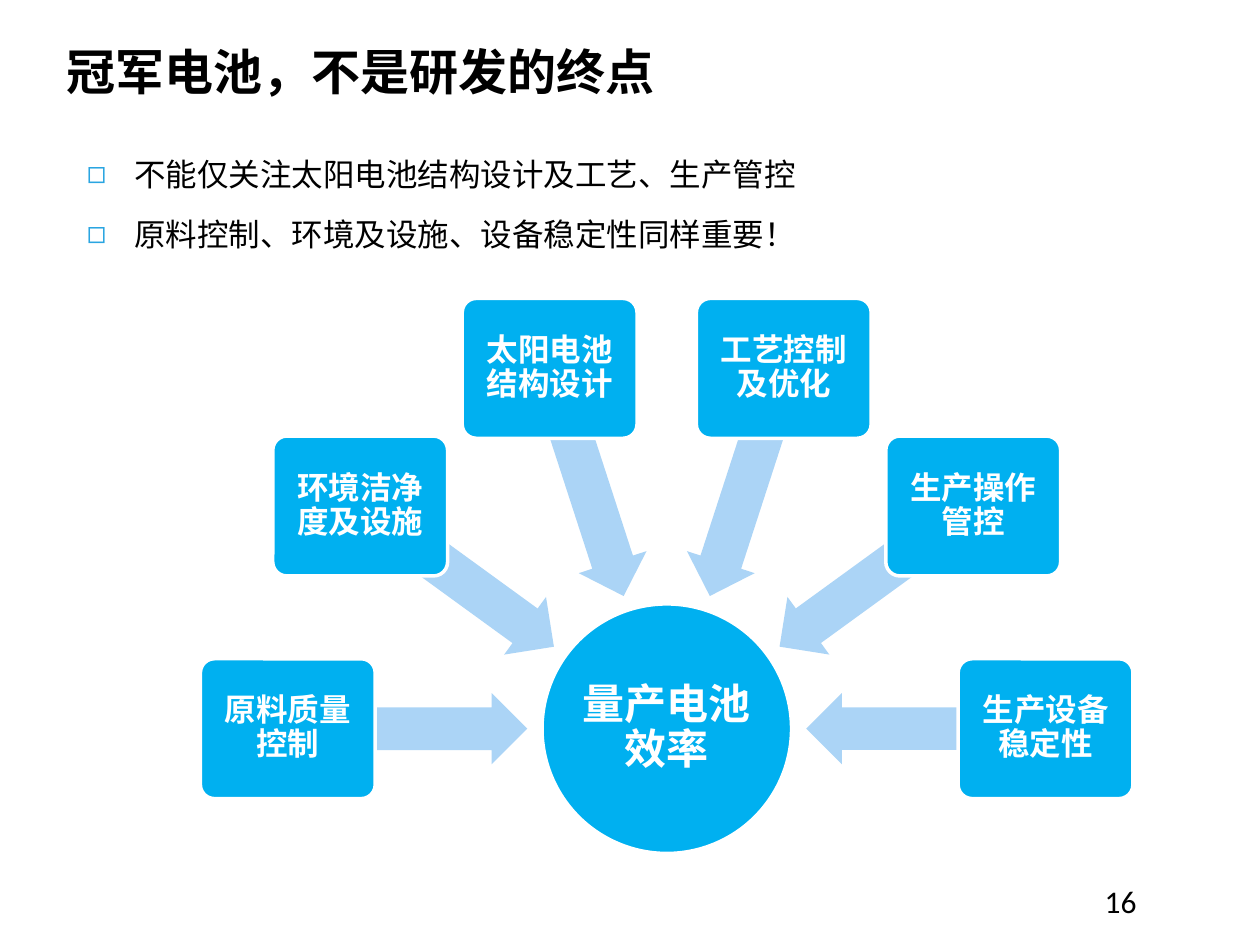
"""Build the slide on the factors that converge on mass-production cell efficiency."""
import math

import pptx
import pptx.dml.color
import pptx.enum.shapes
import pptx.enum.text
import pptx.oxml
import pptx.oxml.ns
import pptx.util
from dataclasses import dataclass

Pt = pptx.util.Pt
SHAPE = pptx.enum.shapes.MSO_SHAPE
ALIGN = pptx.enum.text.PP_ALIGN
ANCHOR = pptx.enum.text.MSO_ANCHOR


@dataclass(frozen=True)
class Theme:
    font: str = "Noto Sans CJK SC"
    number_font: str = "Calibri"
    black: str = "000000"
    white: str = "FFFFFF"
    blue: str = "00B0F0"
    pale_blue: str = "ABD4F6"
    bullet: str = "2AA5E1"
    title_size: int = 28
    hub_size: int = 24
    text_size: int = 18


theme = Theme()


def add_run(paragraph, text, size, color, bold=False, font=theme.font):
    run = paragraph.add_run()
    run.text = text
    run.font.name = font
    run.font.size = Pt(size)
    run.font.bold = bold
    run.font.color.rgb = pptx.dml.color.RGBColor.from_string(color)
    run.font._element.find(pptx.oxml.ns.qn("a:latin")).addnext(pptx.oxml.parse_xml(
        f'<a:ea {pptx.oxml.ns.nsdecls("a")} typeface="{font}"/>'))


def add_centred_shape(kind, x, y, width, height, fill, text="", size=theme.text_size, inset=2.9):
    shape = slide.shapes.add_shape(kind, Pt(x - width / 2), Pt(y - height / 2), Pt(width), Pt(height))
    shape.shadow.inherit = False
    shape.fill.solid()
    shape.fill.fore_color.rgb = pptx.dml.color.RGBColor.from_string(fill)
    if not text:
        shape.line.fill.background()
        return shape
    shape.line.color.rgb = pptx.dml.color.RGBColor.from_string(theme.white)
    shape.line.width = Pt(2)
    frame = shape.text_frame
    frame.word_wrap = True
    frame.vertical_anchor = ANCHOR.MIDDLE
    frame.margin_left = frame.margin_right = frame.margin_top = frame.margin_bottom = Pt(inset)
    paragraph = frame.paragraphs[0]
    paragraph.alignment = ALIGN.CENTER
    paragraph.line_spacing = 0.9
    add_run(paragraph, text, size, theme.white, bold=True)
    return shape


presentation = pptx.Presentation()
presentation.slide_width, presentation.slide_height = Pt(720), Pt(540)
slide = presentation.slides.add_slide(presentation.slide_layouts[1])

title = slide.shapes.title
title.left, title.top, title.width, title.height = Pt(31), Pt(20.2), Pt(673), Pt(41)
title.text_frame.auto_size = pptx.enum.text.MSO_AUTO_SIZE.NONE
title.text_frame.vertical_anchor = ANCHOR.MIDDLE
paragraph = title.text_frame.paragraphs[0]
paragraph.alignment = ALIGN.LEFT
paragraph.space_before = Pt(0)
add_run(paragraph, "冠军电池，不是研发的终点", theme.title_size, theme.black, bold=True)

body = slide.placeholders[1]
body.left, body.top, body.width, body.height = Pt(42.5), Pt(80.6), Pt(475), Pt(73)
frame = body.text_frame
frame.auto_size = pptx.enum.text.MSO_AUTO_SIZE.NONE
points = ["不能仅关注太阳电池结构设计及工艺、生产管控", "原料控制、环境及设施、设备稳定性同样重要！"]
for index, point in enumerate(points):
    paragraph = frame.add_paragraph() if index else frame.paragraphs[0]
    properties = paragraph._p.get_or_add_pPr()
    properties.set("marL", str(Pt(27)))
    properties.set("indent", str(Pt(-27)))
    for element in (f'<a:buClr {{}}><a:srgbClr val="{theme.bullet}"/></a:buClr>', '<a:buChar {} char="◻"/>'):
        properties.append(pptx.oxml.parse_xml(element.format(pptx.oxml.ns.nsdecls("a"))))
    paragraph.line_spacing = 1.2
    paragraph.space_before = Pt(8.3 if index else 0)
    add_run(paragraph, point, theme.text_size, theme.black)

center_x, center_y = 381, 416.4
box_radius, arrow_radius = 216.5, 148.2
factors = ["原料质量控制", "环境洁净度及设施", "太阳电池结构设计", "工艺控制及优化", "生产操作管控", "生产设备稳定性"]

add_centred_shape(SHAPE.OVAL, center_x, center_y, 142.6, 142.6, theme.blue,
                  "量产电池效率", theme.hub_size, 1.5)
for index, factor in enumerate(factors):
    degrees = 180 + index * 180 / (len(factors) - 1)
    across, down = math.cos(math.radians(degrees)), math.sin(math.radians(degrees))
    arrow = add_centred_shape(SHAPE.LEFT_ARROW, center_x + arrow_radius * across,
                              center_y + arrow_radius * down, 137, 40.7, theme.pale_blue)
    arrow.adjustments[0], arrow.adjustments[1] = 0.6, 0.5
    arrow.rotation = degrees % 360
    box = add_centred_shape(SHAPE.ROUNDED_RECTANGLE, center_x + box_radius * across,
                            center_y + box_radius * down, 99.9, 79.9, theme.blue, factor)
    box.adjustments[0] = 0.1

number = slide.shapes.add_textbox(Pt(624.2), Pt(500.4), Pt(60), Pt(29))
number.text_frame.word_wrap = True
add_run(number.text_frame.paragraphs[0], "16", theme.text_size, theme.black, font=theme.number_font)

presentation.save("out.pptx")
